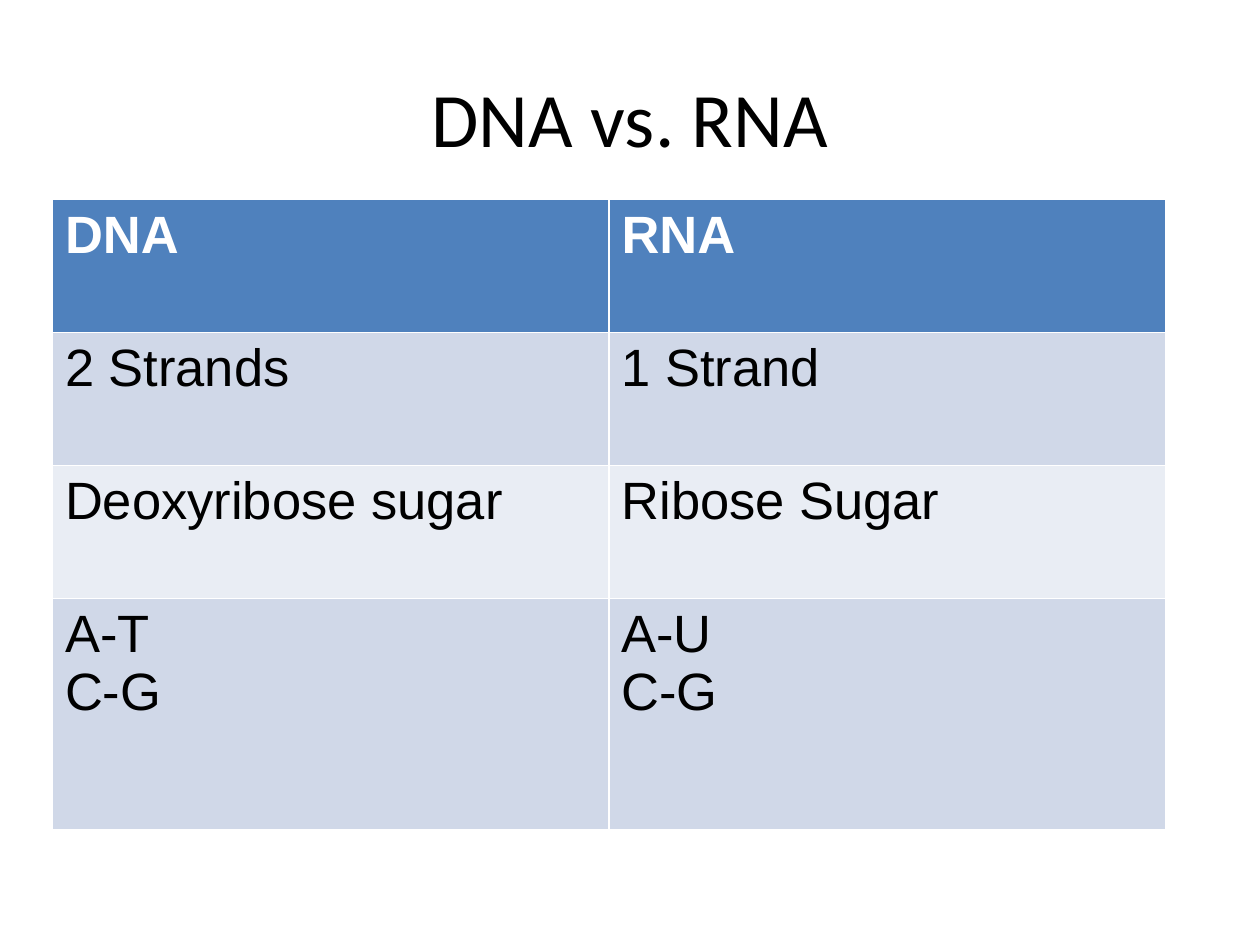
from pptx import Presentation
from pptx.dml.color import RGBColor
from pptx.enum.text import MSO_ANCHOR, PP_ALIGN
from pptx.util import Pt

MIDDLE = MSO_ANCHOR.MIDDLE
CENTER = PP_ALIGN.CENTER

ROWS = [
    ("DNA", "RNA"),
    ("2 Strands", "1 Strand"),
    ("Deoxyribose sugar", "Ribose Sugar"),
    ("A-T\nC-G", "A-U\nC-G"),
]
ROW_HEIGHTS = [76, 76, 76, 132]
ROW_FILLS = ["4F81BD", "D0D8E8", "E9EDF4", "D0D8E8"]
COLUMN_WIDTH = 318


def color(hex_string):
    return RGBColor.from_string(hex_string)


def format_text(text_frame, font_name, size, hex_color, bold=False):
    for paragraph in text_frame.paragraphs:
        for run in paragraph.runs:
            run.font.name = font_name
            run.font.size = Pt(size)
            run.font.bold = bold
            run.font.color.rgb = color(hex_color)


prs = Presentation()
prs.slide_width, prs.slide_height = Pt(720), Pt(540)
slide = prs.slides.add_slide(prs.slide_layouts[6])

title = slide.shapes.add_textbox(Pt(36), Pt(21.6), Pt(648), Pt(90)).text_frame
title.word_wrap = True
title.vertical_anchor = MIDDLE
title.text = "DNA vs. RNA"
title.paragraphs[0].alignment = CENTER
format_text(title, "Calibri", 44, "000000")

# The default table style supplies the white rules, thicker below the header.
comparison = slide.shapes.add_table(
    len(ROWS), 2, Pt(30), Pt(114), Pt(2 * COLUMN_WIDTH), Pt(sum(ROW_HEIGHTS))
).table
for column in comparison.columns:
    column.width = Pt(COLUMN_WIDTH)

for row_index, (entries, height, fill) in enumerate(zip(ROWS, ROW_HEIGHTS, ROW_FILLS)):
    comparison.rows[row_index].height = Pt(height)
    is_header = row_index == 0
    for column_index, entry in enumerate(entries):
        cell = comparison.cell(row_index, column_index)
        cell.fill.solid()
        cell.fill.fore_color.rgb = color(fill)
        cell.text_frame.text = entry
        format_text(cell.text_frame, "Arial", 30, "FFFFFF" if is_header else "000000", is_header)

prs.save("out.pptx")
